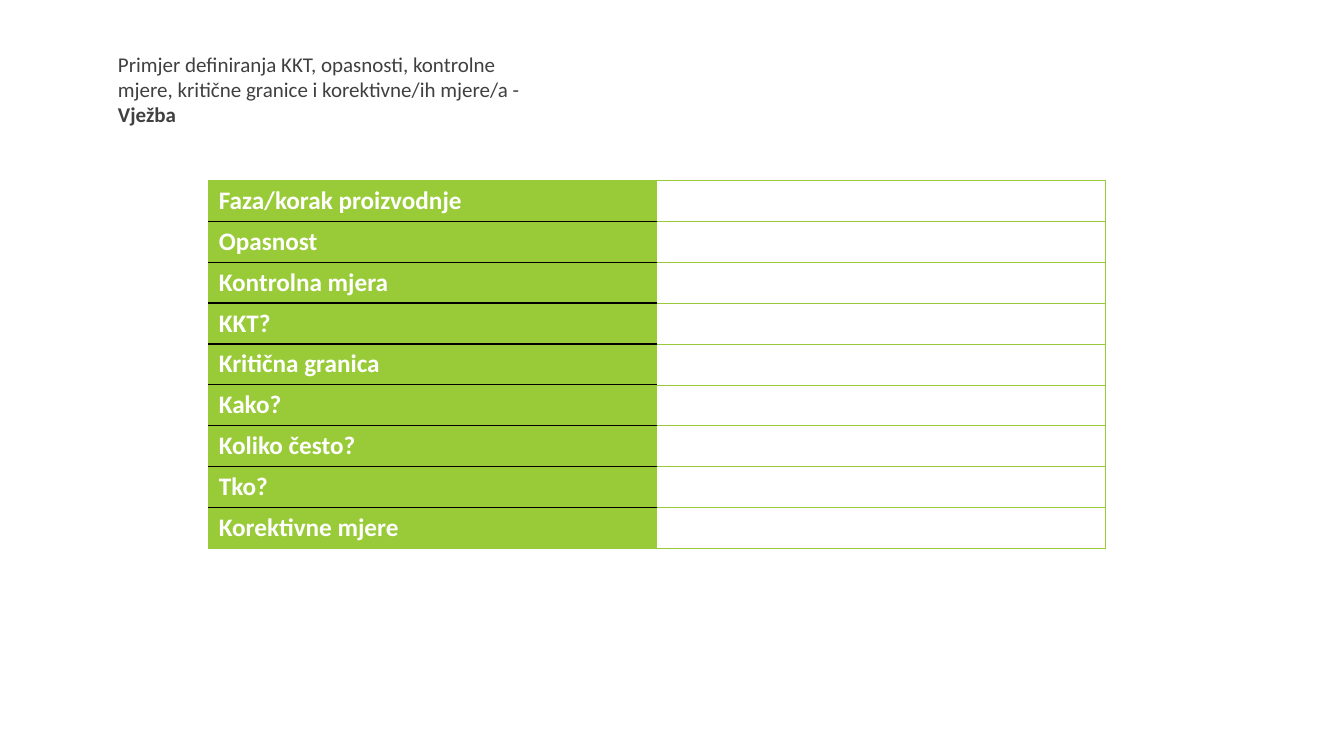
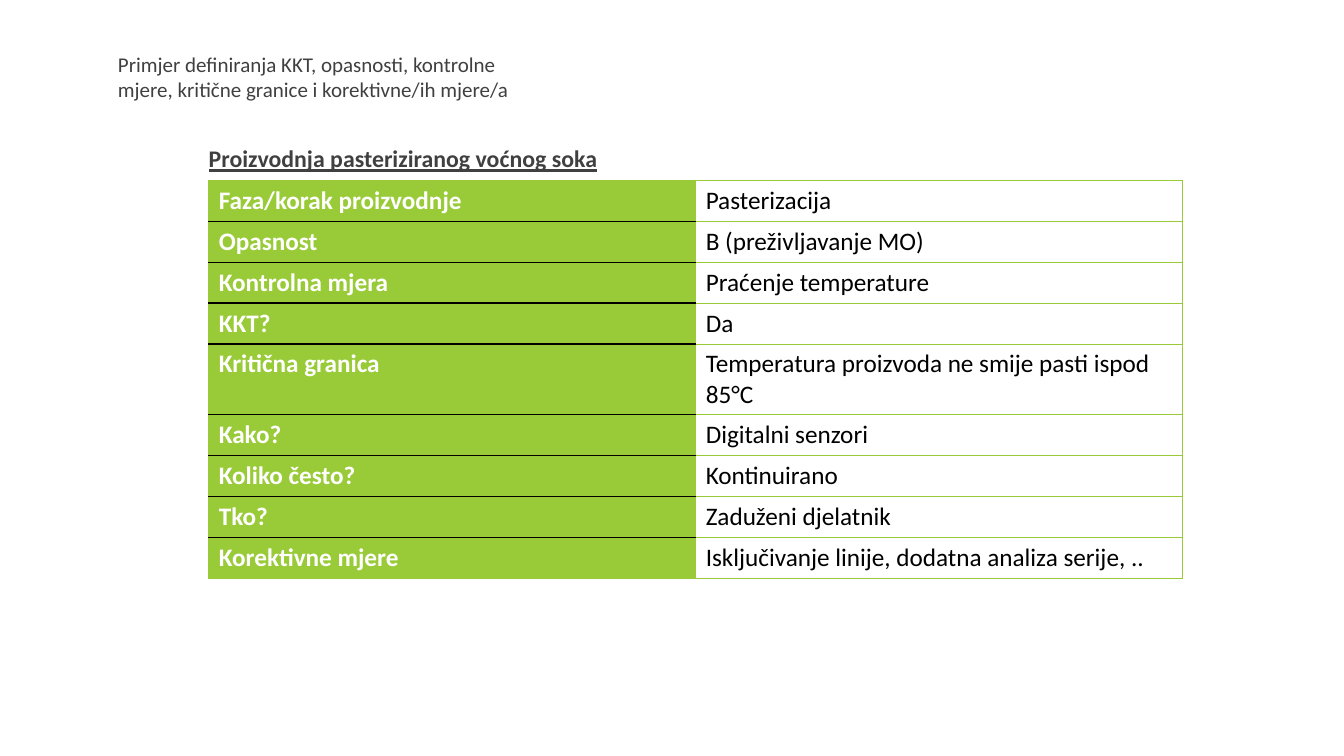
from dataclasses import dataclass

from lxml import etree
from pptx import Presentation
from pptx.dml.color import RGBColor
from pptx.oxml import ns
from pptx.util import Inches, Pt


@dataclass(frozen=True)
class Theme:
    """Colours, font, type sizes and line widths shared by the slides."""
    green: str = "99CB38"
    white: str = "FFFFFF"
    black: str = "000000"
    grey: str = "404040"
    font: str = "Calibri"
    title_size: float = 15
    caption_size: float = 17
    cell_size: float = 18
    thin: float = 0.5
    thick: float = 1


THEME = Theme()
NO_STYLE = "{2D5ABB26-0587-4C30-8999-92F81FD0307C}"
TITLE = ("Primjer definiranja KKT, opasnosti, kontrolne mjere, "
         "kritične granice i korektivne/ih mjere/a")
LABELS = ["Faza/korak proizvodnje", "Opasnost", "Kontrolna mjera", "KKT?",
          "Kritična granica", "Kako?", "Koliko često?", "Tko?",
          "Korektivne mjere"]
JUICE_ANSWERS = ["Pasterizacija", "B (preživljavanje MO)",
                 "Praćenje temperature", "Da",
                 "Temperatura proizvoda ne smije pasti ispod 85°C",
                 "Digitalni senzori", "Kontinuirano", "Zaduženi djelatnik",
                 "Isključivanje linije, dodatna analiza serije, .."]
TITLE_BOX = (1.17, 0.51, 4.3, 0.81)
CAPTION_BOX = (2.07, 1.43, 4.17, 0.42)
TABLE_LEFT, TABLE_TOP, TABLE_HEIGHT = 2.07, 1.79, 3.65


def add_run(paragraph, wording, size, color, bold=False, underline=False):
    """Append one styled run to a paragraph."""
    run = paragraph.add_run()
    run.text = wording
    run.font.name = THEME.font
    run.font.size = Pt(size)
    run.font.color.rgb = RGBColor.from_string(color)
    run.font.bold = bold
    run.font.underline = underline


def add_text(slide, box, runs):
    """Place a wrapped text box without insets, holding the given runs."""
    frame = slide.shapes.add_textbox(*map(Inches, box)).text_frame
    frame.word_wrap = True
    frame.margin_left = frame.margin_right = 0
    frame.margin_top = frame.margin_bottom = 0
    for run in runs:
        add_run(frame.paragraphs[0], **run)


def set_borders(cell, **edges):
    """Draw the edges given as (colour, width) and clear the others."""
    properties = cell._tc.get_or_add_tcPr()
    for side in "LRTB":
        line = etree.SubElement(properties, ns.qn(f"a:ln{side}"))
        if side in edges:
            color, width = edges[side]
            line.set("w", str(Pt(width)))
            fill = etree.SubElement(line, ns.qn("a:solidFill"))
            etree.SubElement(fill, ns.qn("a:srgbClr")).set("val", color)
        else:
            line.set("w", "0")
            etree.SubElement(line, ns.qn("a:noFill"))


def fill_cell(cell, wording, background, color, bold, **edges):
    """Give a cell its borders, background and text."""
    set_borders(cell, **edges)
    cell.fill.solid()
    cell.fill.fore_color.rgb = RGBColor.from_string(background)
    paragraph = cell.text_frame.paragraphs[0]
    paragraph.font.size = Pt(THEME.cell_size)
    if wording:
        add_run(paragraph, wording, THEME.cell_size, color, bold)


def add_control_table(slide, box, answers):
    """Place the table of control steps with two equal columns."""
    last = len(LABELS) - 1
    table = slide.shapes.add_table(len(LABELS), 2, *map(Inches, box)).table
    table.first_row = table.horz_banding = False
    table._tbl.tblPr.find(ns.qn("a:tableStyleId")).text = NO_STYLE
    outline = (THEME.green, THEME.thin)
    divider = (THEME.black, THEME.thick)
    for index, (label, answer) in enumerate(zip(LABELS, answers)):
        fill_cell(table.cell(index, 0), label, THEME.green, THEME.white, True,
                  L=outline, T=divider if index else outline,
                  B=divider if index < last else outline)
        fill_cell(table.cell(index, 1), answer, THEME.white, THEME.black,
                  False, R=outline, T=outline, B=outline)


def add_control_slide(deck, table_width, answers, title_end="", caption=""):
    """Add a slide with a title, a control table and an optional caption."""
    slide = deck.slides.add_slide(deck.slide_layouts[6])
    add_control_table(
        slide, (TABLE_LEFT, TABLE_TOP, table_width, TABLE_HEIGHT), answers)
    title_style = dict(size=THEME.title_size, color=THEME.grey)
    title_runs = [dict(wording=TITLE, **title_style)]
    if title_end:
        title_runs[0]["wording"] += " - "
        title_runs.append(dict(wording=title_end, bold=True, **title_style))
    add_text(slide, TITLE_BOX, title_runs)
    if caption:
        add_text(slide, CAPTION_BOX, [
            dict(wording=caption, size=THEME.caption_size, color=THEME.grey,
                 bold=True, underline=True)])


def main():
    """Build and save the presentation."""
    deck = Presentation()
    deck.slide_width, deck.slide_height = Inches(13.33), Inches(7.5)
    add_control_slide(deck, 8.89, [""] * len(LABELS), title_end="Vježba")
    add_control_slide(deck, 9.66, JUICE_ANSWERS,
                      caption="Proizvodnja pasteriziranog voćnog soka")
    deck.save("out.pptx")


if __name__ == "__main__":
    main()
